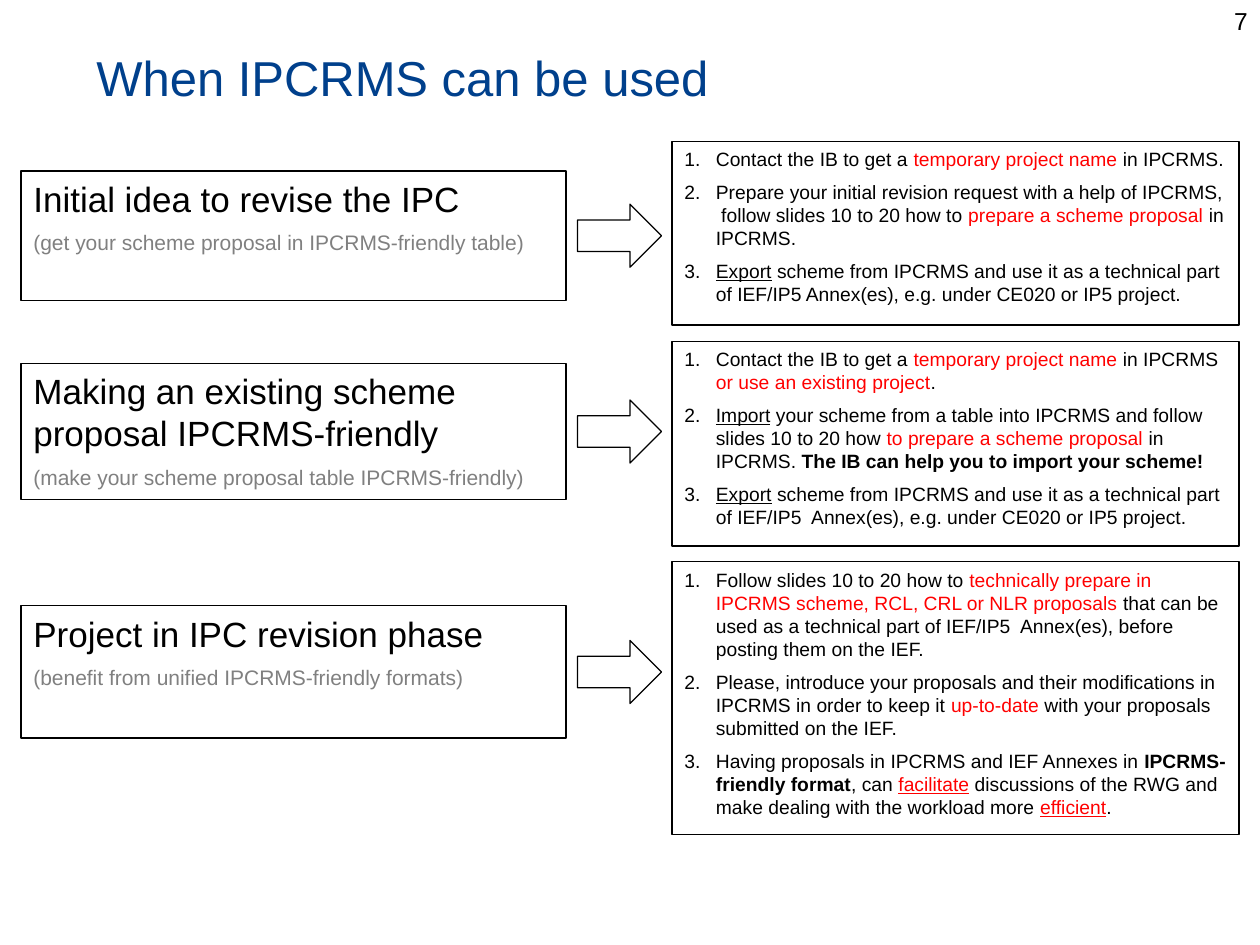
"""Build the slide that pairs each use of IPCRMS with its steps."""
from dataclasses import dataclass

from pptx import Presentation
from pptx.dml.color import RGBColor
from pptx.enum.shapes import MSO_SHAPE
from pptx.enum.text import MSO_ANCHOR, PP_ALIGN
from pptx.oxml.ns import qn
from pptx.util import Inches, Pt

BOX, ARROW = MSO_SHAPE.FLOWCHART_PROCESS, MSO_SHAPE.RIGHT_ARROW
TOP, MIDDLE = MSO_ANCHOR.TOP, MSO_ANCHOR.MIDDLE
LEFT, RIGHT = PP_ALIGN.LEFT, PP_ALIGN.RIGHT
BLACK = RGBColor(0x00, 0x00, 0x00)
GRAY = RGBColor(0x80, 0x80, 0x80)
RED = RGBColor(0xFF, 0x00, 0x00)
BLUE = RGBColor(0x00, 0x40, 0x8C)

WIDE, HIGH = Inches(10), Inches(7.5)
COLS, ROWS = 120, 90
CASE_COL, CASE_WIDE = 2, 51.9
ARROW_COL, ARROW_WIDE, ARROW_HIGH = 55, 8, 6
STEP_COL, STEP_WIDE = 64, 54

PLAIN = {"size": Pt(11), "color": BLACK}
HOT = {**PLAIN, "color": RED}
BOLD = {**PLAIN, "bold": True}
UNDER = {**PLAIN, "underline": True}
HOT_UNDER = {**HOT, "underline": True}
HEAD = {"size": Pt(20), "color": BLACK}
NOTE = {"size": Pt(12), "color": GRAY}
TITLE = {"size": Pt(28), "color": BLUE}
PAGE = {"size": Pt(14), "color": BLACK}

Run = tuple[str, dict]
Para = list[Run]


@dataclass
class Case:
    """One use of IPCRMS: its box on the left and its steps on the right."""
    row: float
    high: float
    head: str
    note: str
    step_row: float
    step_high: float
    steps: list[Para]


CASES = [
    Case(16.3, 12.3, "Initial idea to revise the IPC",
         "(get your scheme proposal in IPCRMS-friendly table)", 13.45, 17.5, [
             [("Contact the IB to get a ", PLAIN), ("temporary project name ", HOT),
              ("in IPCRMS.", PLAIN)],
             [("Prepare your initial revision request with a help of IPCRMS,  "
               "follow slides 10 to 20 how to", PLAIN),
              (" prepare a scheme proposal ", HOT), ("in IPCRMS.", PLAIN)],
             [("Export", UNDER),
              (" scheme from IPCRMS and use it as a technical part of IEF/IP5 "
               "Annex(es), e.g. under CE020 or IP5 project.", PLAIN)]]),
    Case(34.6, 13, "Making an existing scheme proposal IPCRMS-friendly",
         "(make your scheme proposal table IPCRMS-friendly)", 32.5, 19.5, [
             [("Contact the IB to get a ", PLAIN), ("temporary project name ", HOT),
              ("in IPCRMS ", PLAIN), ("or use an existing project", HOT), (".", PLAIN)],
             [("Import", UNDER),
              (" your scheme from a table into IPCRMS and follow slides 10 to 20 how ",
               PLAIN),
              ("to prepare a scheme proposal ", HOT), ("in IPCRMS. ", PLAIN),
              ("The IB can help you to import your scheme!", BOLD)],
             [("Export", UNDER),
              (" scheme from IPCRMS and use it as a technical part of IEF/IP5  "
               "Annex(es), e.g. under CE020 or IP5 project.", PLAIN)]]),
    Case(57.7, 12.6, "Project in IPC revision phase",
         "(benefit from unified IPCRMS-friendly formats)", 53.5, 26, [
             [("Follow slides 10 to 20 how to ", PLAIN),
              ("technically prepare in IPCRMS scheme, RCL, CRL or NLR proposals ", HOT),
              ("that can be used as a technical part of IEF/IP5  Annex(es), before "
               "posting them on the IEF.", PLAIN)],
             [("Please, introduce your proposals and their modifications in IPCRMS "
               "in order to keep it ", PLAIN),
              ("up-to-date", HOT),
              (" with your proposals submitted on the IEF.", PLAIN)],
             [("Having proposals in IPCRMS and IEF Annexes in ", PLAIN),
              ("IPCRMS-friendly format", BOLD), (", can ", PLAIN),
              ("facilitate", HOT_UNDER),
              (" discussions of the RWG and make dealing with the workload more ", PLAIN),
              ("efficient", HOT_UNDER), (".", PLAIN)]]),
]


def place(col: float, row: float, wide: float, high: float) -> list[int]:
    """Turn columns and rows of the grid into slide lengths."""
    return [int(WIDE * col / COLS), int(HIGH * row / ROWS),
            int(WIDE * wide / COLS), int(HIGH * high / ROWS)]


def count(para) -> None:
    """Number a paragraph with a hanging indent."""
    props = para._p.get_or_add_pPr()
    props.set("marL", str(Inches(0.25)))
    props.set("indent", str(-Inches(0.25)))
    mark = props.makeelement(qn("a:buFont"), {"typeface": "+mj-lt"})
    props.append(mark)
    props.append(props.makeelement(qn("a:buAutoNum"), {"type": "arabicPeriod"}))


def write(shape, paras: list[Para], gap: float = 0, listed: bool = False,
          align=LEFT, anchor=TOP) -> None:
    """Fill a shape with paragraphs of styled runs."""
    frame = shape.text_frame
    frame.word_wrap, frame.vertical_anchor = True, anchor
    for i, runs in enumerate(paras):
        para = frame.add_paragraph() if i else frame.paragraphs[0]
        para.alignment = align
        para.space_before = Pt(gap if i else 0)
        if listed:
            count(para)
        for text, style in runs:
            run = para.add_run()
            run.text = text
            run.font.name = "Arial"
            for key, value in style.items():
                if key == "color":
                    run.font.color.rgb = value
                else:
                    setattr(run.font, key, value)


def draw(slide, kind, *spot: float):
    """Draw an unfilled shape with a thin black outline."""
    shape = slide.shapes.add_shape(kind, *place(*spot))
    shape.shadow.inherit = False
    shape.fill.background()
    shape.line.color.rgb = BLACK
    shape.line.width = Pt(0.75)
    return shape


def show(slide, case: Case) -> None:
    """Draw a case, its arrow and its steps."""
    box = draw(slide, BOX, CASE_COL, case.row, CASE_WIDE, case.high)
    write(box, [[(case.head, HEAD)], [(case.note, NOTE)]], gap=6)
    draw(slide, ARROW, ARROW_COL, case.row + (case.high - ARROW_HIGH) / 2,
         ARROW_WIDE, ARROW_HIGH)
    box = draw(slide, BOX, STEP_COL, case.step_row, STEP_WIDE, case.step_high)
    write(box, case.steps, gap=5.5, listed=True)


def main() -> None:
    """Build and save the slide."""
    deck = Presentation()
    deck.slide_width, deck.slide_height = WIDE, HIGH
    slide = deck.slides.add_slide(deck.slide_layouts[6])
    title = slide.shapes.add_textbox(*place(8, 3.1, 82, 8.4))
    write(title, [[("When IPCRMS can be used", TITLE)]], anchor=MIDDLE)
    for case in CASES:
        show(slide, case)
    page = slide.shapes.add_textbox(*place(92, 0, 28, 6.2))
    write(page, [[("7", PAGE)]], align=RIGHT)
    deck.save("out.pptx")


if __name__ == "__main__":
    main()
